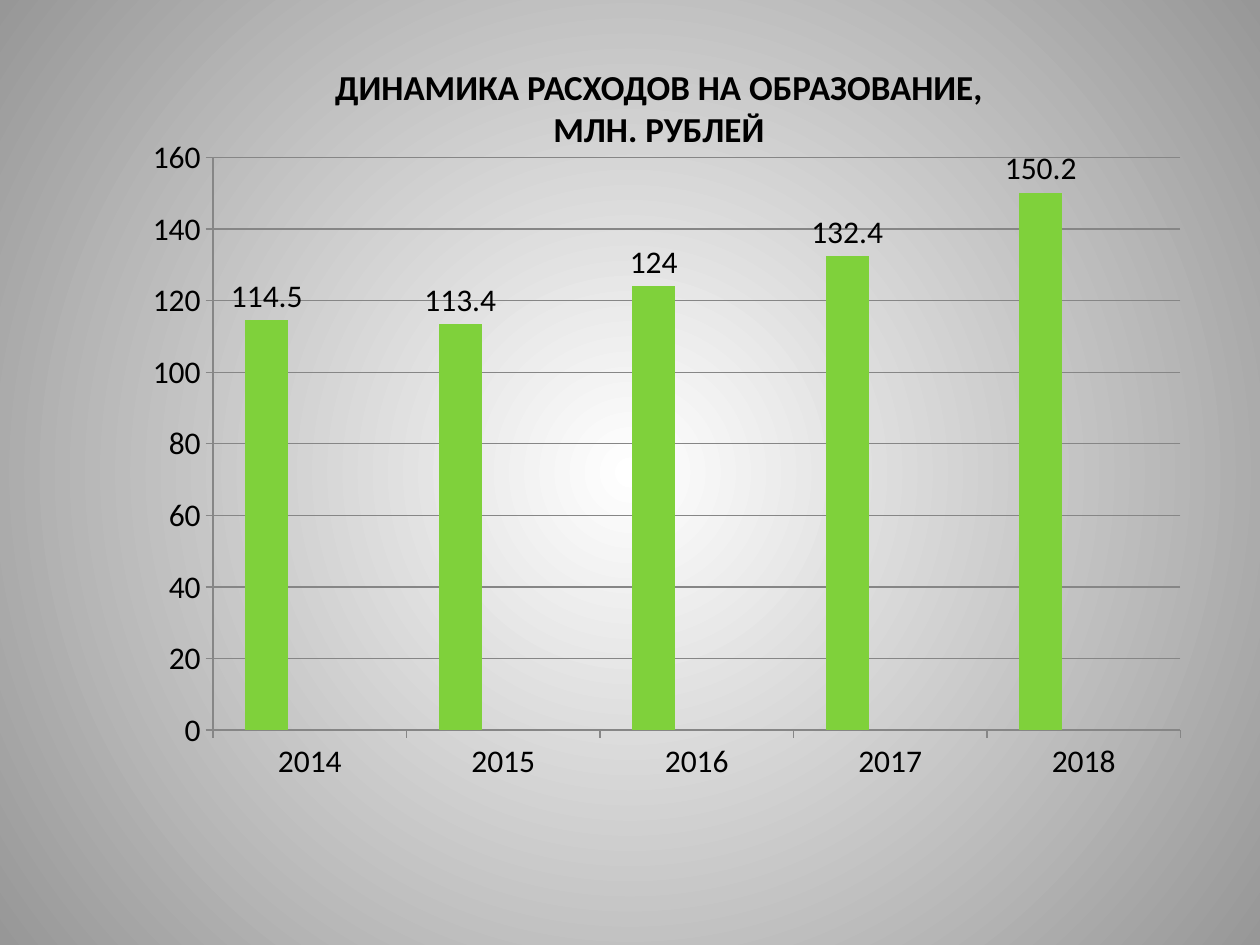
from dataclasses import dataclass

from lxml import etree
from pptx import Presentation
from pptx import util as u
from pptx.chart.data import CategoryChartData
from pptx.dml.color import RGBColor
from pptx.enum import chart as ch
from pptx.enum import text as tx
from pptx.oxml.ns import qn

W, H = 10, 7.5


@dataclass(frozen=True)
class Theme:
    font: str = "Calibri"
    ink: str = "000000"
    line: str = "868686"
    glow: tuple = ("FFFFFF", "979797")
    bars: tuple = ("7FD13B", "EA157A", "FEB80A")
    head: int = 20
    body: int = 18


THEME = Theme()
TITLE = ("ДИНАМИКА РАСХОДОВ НА ОБРАЗОВАНИЕ,", "МЛН. РУБЛЕЙ")
YEARS = ("2014", "2015", "2016", "2017", "2018")
COSTS = (114.5, 113.4, 124, 132.4, 150.2)
BLANK = (None,) * len(YEARS)
PLOT = {"x": 0.136, "y": 0.029, "w": 0.855, "h": 0.808}


def box(x, y, w, h):
    """Turn shares of the slide's size into lengths."""
    return [u.Inches(v) for v in (x * W, y * H, w * W, h * H)]


def put(item, **vals):
    for name, val in vals.items():
        setattr(item, name, val)


def style(font, size, bold=False):
    put(font, name=THEME.font, size=u.Pt(size), bold=bold)
    font.color.rgb = RGBColor.from_string(THEME.ink)


def stroke(line):
    line.color.rgb = RGBColor.from_string(THEME.line)
    line.width = u.Pt(0.75)


def add_glow(slide):
    """Fill the background with a gradient that spreads from the centre."""
    fill = slide.background.fill
    fill.gradient()
    for stop, tint in zip(fill.gradient_stops, THEME.glow):
        stop.color.rgb = RGBColor.from_string(tint)
    for pos, stop in enumerate(fill.gradient_stops):
        stop.position = pos
    lin = next(slide.element.iter(qn("a:lin")))
    ring = etree.Element(qn("a:path"), {"path": "circle"})
    etree.SubElement(ring, qn("a:fillToRect"), dict.fromkeys("ltrb", "50000"))
    lin.getparent().replace(lin, ring)


def set_plot(chart):
    """Fix the inner plot area as shares of the chart's size."""
    area = next(chart.element.iter(qn("c:plotArea")))
    for old in area.findall(qn("c:layout")):
        area.remove(old)
    layout = etree.Element(qn("c:layout"))
    man = etree.SubElement(layout, qn("c:manualLayout"))
    marks = {"layoutTarget": "inner", "xMode": "edge", "yMode": "edge"}
    for name, val in {**marks, **PLOT}.items():
        etree.SubElement(man, qn(f"c:{name}"), val=str(val))
    area.insert(0, layout)


def add_bars(slide, place):
    data = CategoryChartData()
    data.categories = YEARS
    for num, vals in enumerate((COSTS, BLANK, BLANK), 1):
        data.add_series(f"Series {num}", vals)
    kind = ch.XL_CHART_TYPE.COLUMN_CLUSTERED
    chart = slide.shapes.add_chart(kind, *place, data).chart
    put(chart, has_legend=False, has_title=False)
    style(chart.font, THEME.body)
    set_plot(chart)

    plot = chart.plots[0]
    put(plot, gap_width=150, overlap=0, vary_by_categories=False)
    for row, tint in zip(plot.series, THEME.bars):
        row.format.fill.solid()
        row.format.fill.fore_color.rgb = RGBColor.from_string(tint)
    tags = plot.series[0].data_labels
    put(tags, show_value=True, position=ch.XL_LABEL_POSITION.OUTSIDE_END)
    style(tags.font, THEME.body)

    for axis in (chart.category_axis, chart.value_axis):
        axis.major_tick_mark = ch.XL_TICK_MARK.OUTSIDE
        stroke(axis.format.line)
    put(chart.value_axis, minimum_scale=0, maximum_scale=160, major_unit=20,
        has_major_gridlines=True)
    stroke(chart.value_axis.major_gridlines.format.line)


def add_title(slide, place):
    frame = slide.shapes.add_textbox(*place).text_frame
    put(frame, word_wrap=True, auto_size=tx.MSO_AUTO_SIZE.SHAPE_TO_FIT_TEXT)
    frame.text = "\n".join(TITLE)
    for para in frame.paragraphs:
        para.alignment = tx.PP_ALIGN.CENTER
        style(para.runs[0].font, THEME.head, bold=True)


def main():
    deck = Presentation()
    put(deck, slide_width=u.Inches(W), slide_height=u.Inches(H))
    slide = deck.slides.add_slide(deck.slide_layouts[6])
    add_glow(slide)
    add_bars(slide, box(0.047, 0.145, 0.898, 0.75))
    add_title(slide, box(0.156, 0.063, 0.734, 0.103))
    deck.save("out.pptx")


if __name__ == "__main__":
    main()
